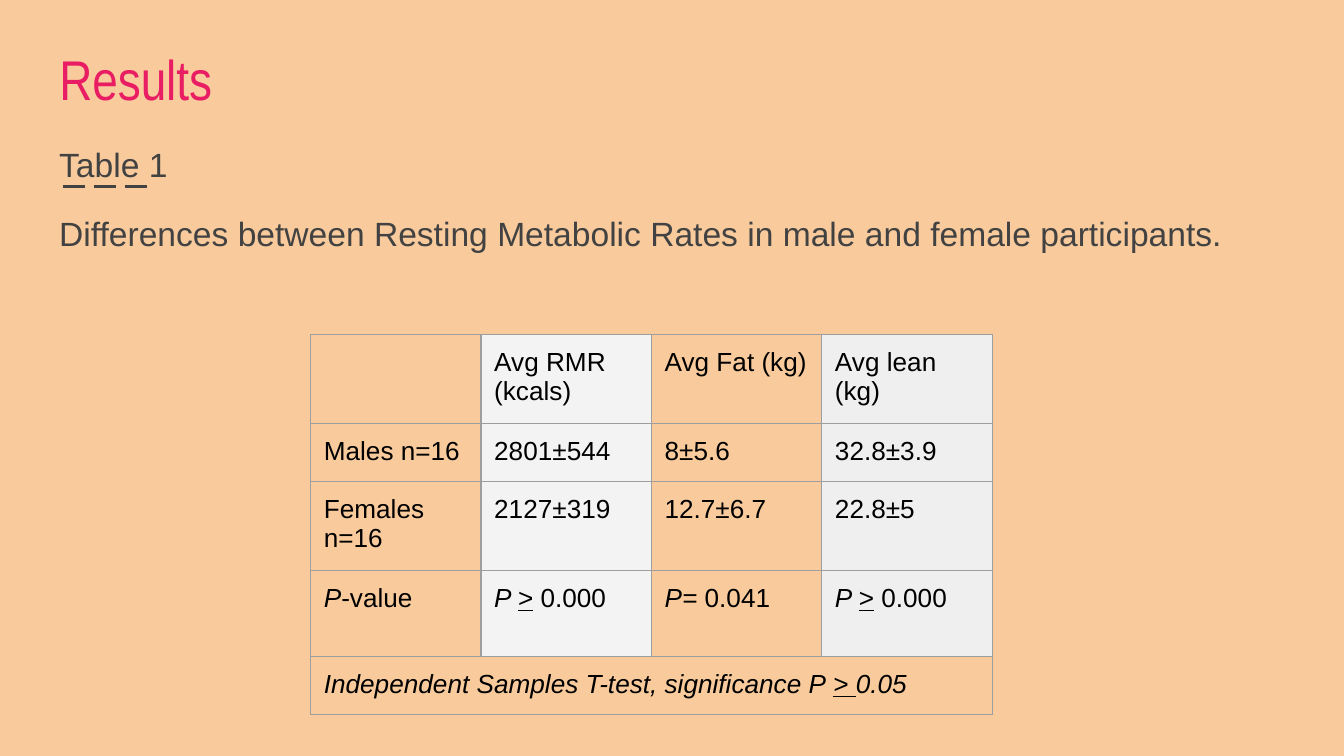
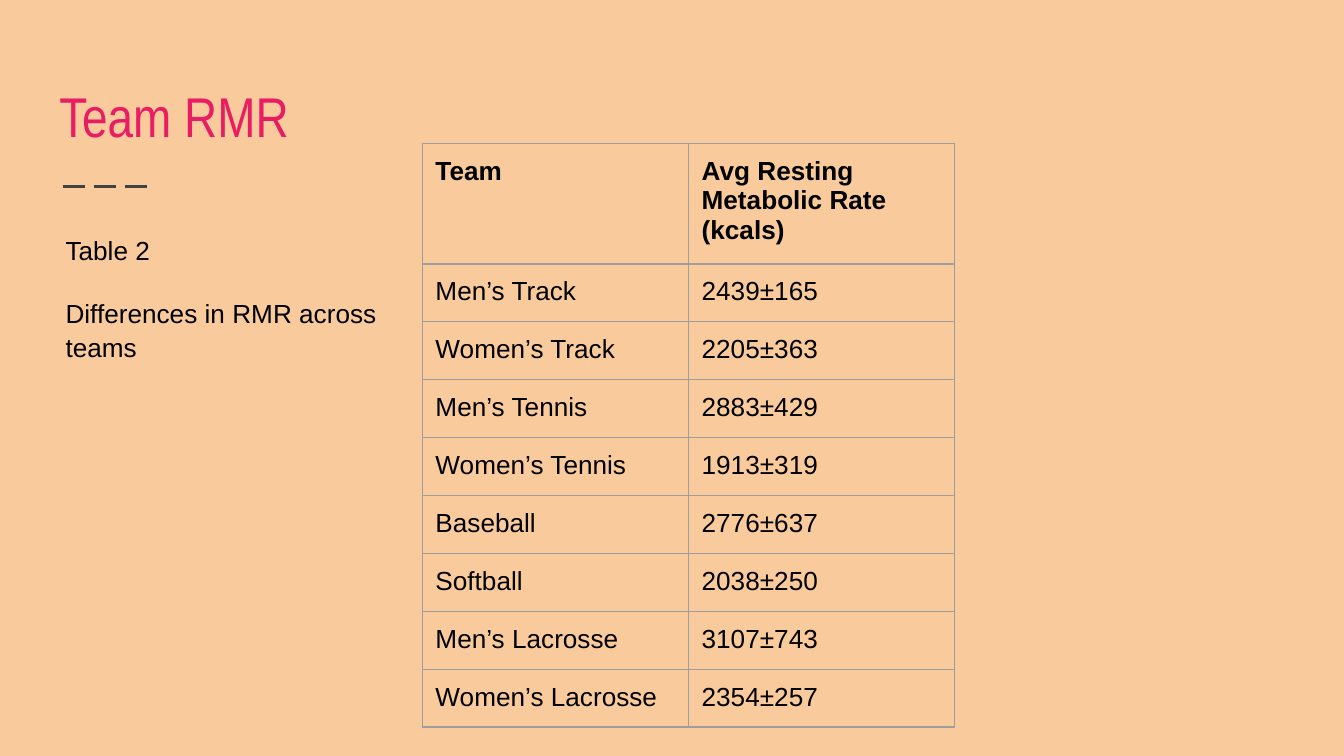
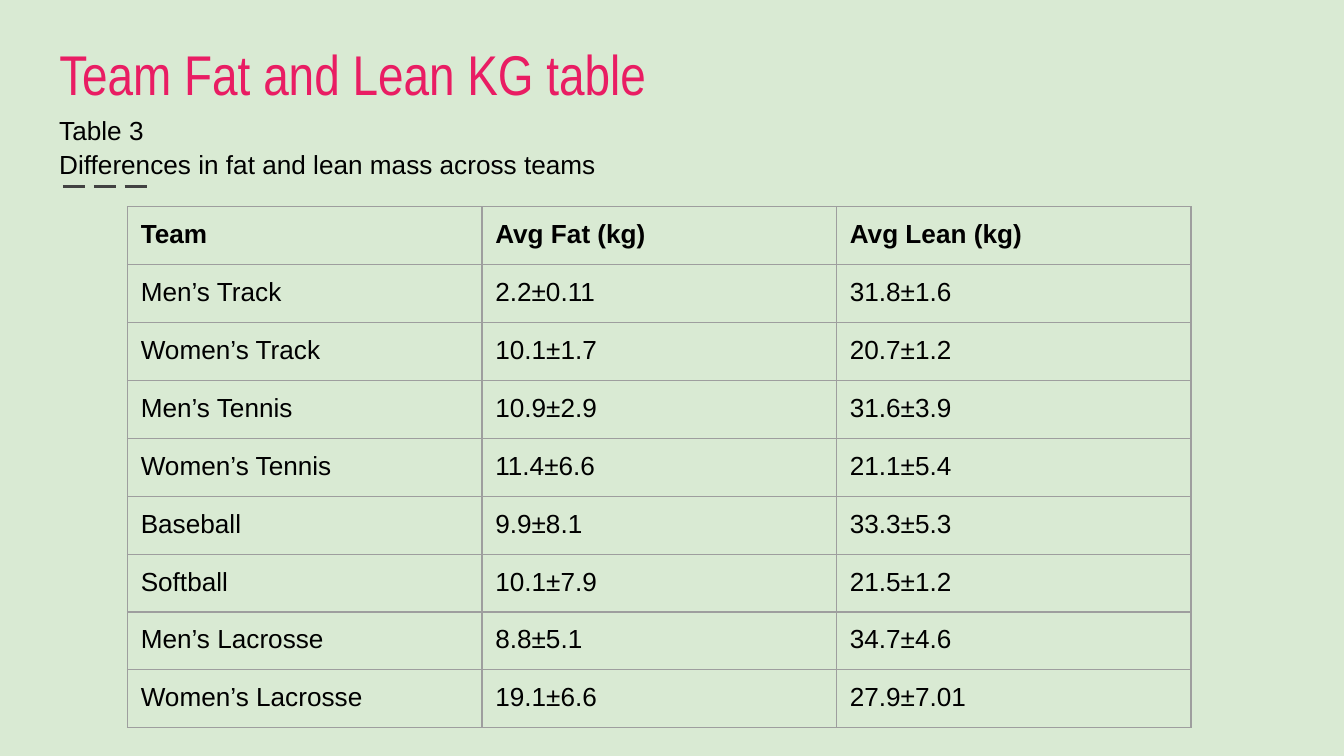
from dataclasses import dataclass, field
from typing import Any, NamedTuple

import pptx
import pptx.dml.color
import pptx.enum.dml
import pptx.enum.shapes
import pptx.enum.text
import pptx.oxml
import pptx.oxml.ns
import pptx.util
from pptx.util import Cm

# Shared look
PEACH, MINT = "F9CB9C", "D9EAD3"
PINK, GRAY, BLACK, BORDER = "E91D63", "424242", "000000", "9E9E9E"
LIGHT, LIGHTER = "EFEFEF", "F3F3F3"
MARGIN = Cm(0.25)
TITLE_FONT = {"name": "Arial Narrow", "size": pptx.util.Pt(30), "bold": False}
CAPTION_FONT = {"name": "Arial", "size": pptx.util.Pt(14)}
LEAD_FONT = {"name": "Arial", "size": pptx.util.Pt(18)}
INSETS = {f"margin_{side}": MARGIN for side in ("left", "right", "top", "bottom")}
ROW_HEIGHT, TALL_ROW = 1.06, 1.62


class Run(NamedTuple):
    text: str
    style: dict[str, Any] = {}


ITALIC, UNDERLINE = {"italic": True}, {"underline": True}
Content = str | list[Run]


class Box(NamedTuple):
    left: float
    top: float
    width: float
    height: float


@dataclass
class Caption:
    box: Box
    lines: list[str]
    line_spacing: float
    gap: int = 0
    font: dict[str, Any] = field(default_factory=lambda: CAPTION_FONT)
    color: str = BLACK


@dataclass
class Table:
    left: float
    top: float
    column_width: float
    rows: list[list[Content]]
    heights: dict[int, float] = field(default_factory=dict)
    column_fills: dict[int, str] = field(default_factory=dict)
    bold_header: bool = True
    note: Content = ""


@dataclass
class Page:
    background: str
    title: str
    title_top: float
    caption: Caption
    table: Table


def rgb(color: str) -> pptx.dml.color.RGBColor:
    return pptx.dml.color.RGBColor.from_string(color)


def apply(target: Any, values: dict[str, Any]) -> None:
    for name, value in values.items():
        setattr(target, name, value)


def write(paragraph: Any, content: Content, font: dict[str, Any], color: str) -> None:
    for part in [Run(content)] if isinstance(content, str) else content:
        if part.text:
            run = paragraph.add_run()
            run.text = part.text
            apply(run.font, font | part.style)
            run.font.color.rgb = rgb(color)


# Slide parts
def add_title(slide: Any, text: str, top: float) -> None:
    title = slide.shapes.title
    apply(title, {"left": Cm(0.87), "top": Cm(top), "width": Cm(23.67), "height": Cm(2.03)})
    frame = title.text_frame
    apply(frame, INSETS | {"word_wrap": True,
                           "auto_size": pptx.enum.text.MSO_AUTO_SIZE.NONE,
                           "vertical_anchor": pptx.enum.text.MSO_ANCHOR.BOTTOM})
    frame.paragraphs[0].alignment = pptx.enum.text.PP_ALIGN.LEFT
    write(frame.paragraphs[0], text, TITLE_FONT, PINK)


def add_dashes(slide: Any) -> None:
    dashes = slide.shapes.add_connector(
        pptx.enum.shapes.MSO_CONNECTOR.STRAIGHT, Cm(1.19), Cm(3.53), Cm(2.9), Cm(3.53))
    dashes.line.color.rgb = rgb(GRAY)
    apply(dashes.line, {"width": pptx.util.Pt(1.5),
                        "dash_style": pptx.enum.dml.MSO_LINE.LONG_DASH})
    properties = dashes._element.spPr
    properties.append(properties.makeelement(pptx.oxml.ns.qn("a:effectLst"), {}))


def add_caption(slide: Any, caption: Caption) -> None:
    frame = slide.shapes.add_textbox(*map(Cm, caption.box)).text_frame
    apply(frame, INSETS | {"word_wrap": True})
    for index, line in enumerate(caption.lines):
        paragraph = frame.add_paragraph() if index else frame.paragraphs[0]
        apply(paragraph, {"line_spacing": caption.line_spacing,
                          "space_before": pptx.util.Pt(caption.gap if index else 0)})
        write(paragraph, line, caption.font, caption.color)


def add_borders(cell: Any) -> None:
    properties = cell._tc.get_or_add_tcPr()
    for index, side in enumerate("LRTB"):
        properties.insert(index, pptx.oxml.parse_xml(
            f'<a:ln{side} {pptx.oxml.ns.nsdecls("a")} w="{pptx.util.Pt(0.75)}">'
            f'<a:solidFill><a:srgbClr val="{BORDER}"/></a:solidFill></a:ln{side}>'))


def add_table(slide: Any, table: Table) -> None:
    columns = len(table.rows[0])
    rows = list(table.rows)
    if table.note:
        rows.append([table.note] + [""] * (columns - 1))
    heights = [table.heights.get(index, ROW_HEIGHT) for index in range(len(rows))]
    grid = slide.shapes.add_table(
        len(rows), columns, Cm(table.left), Cm(table.top),
        Cm(table.column_width * columns), Cm(sum(heights))).table
    apply(grid, {"first_row": False, "horz_banding": False})
    for column in grid.columns:
        column.width = Cm(table.column_width)
    for row_index, row in enumerate(rows):
        grid.rows[row_index].height = Cm(heights[row_index])
        is_note = bool(table.note) and row_index == len(rows) - 1
        font = CAPTION_FONT | {"bold": table.bold_header and row_index == 0}
        for column_index, content in enumerate(row):
            cell = grid.cell(row_index, column_index)
            apply(cell, INSETS)
            write(cell.text_frame.paragraphs[0], content, font, BLACK)
            fill = None if is_note else table.column_fills.get(column_index)
            if fill:
                cell.fill.solid()
                cell.fill.fore_color.rgb = rgb(fill)
            else:
                cell.fill.background()
            add_borders(cell)
    if table.note:
        last = len(rows) - 1
        grid.cell(last, 0).merge(grid.cell(last, columns - 1))


# Content
TEAMS = ["Men’s Track", "Women’s Track", "Men’s Tennis", "Women’s Tennis",
         "Baseball", "Softball", "Men’s Lacrosse", "Women’s Lacrosse"]
TEAM_RATES = ["2439±165", "2205±363", "2883±429", "1913±319",
              "2776±637", "2038±250", "3107±743", "2354±257"]
TEAM_FAT = ["2.2±0.11", "10.1±1.7", "10.9±2.9", "11.4±6.6",
            "9.9±8.1", "10.1±7.9", "8.8±5.1", "19.1±6.6"]
TEAM_LEAN = ["31.8±1.6", "20.7±1.2", "31.6±3.9", "21.1±5.4",
             "33.3±5.3", "21.5±1.2", "34.7±4.6", "27.9±7.01"]
AT_LEAST_ZERO = [Run("P ", ITALIC), Run(">", UNDERLINE), Run(" 0.000")]

PAGES = [
    Page(PEACH, "Results", 0.33,
         Caption(Box(0.87, 2.36, 23.67, 8.61),
                 ["Table 1", "Differences between Resting Metabolic Rates in male "
                             "and female participants."],
                 1.15, 12, LEAD_FONT, GRAY),
         Table(5.87, 6.32, 3.22,
               [["", "Avg RMR (kcals)", "Avg Fat (kg)", "Avg lean (kg)"],
                ["Males n=16", "2801±544", "8±5.6", "32.8±3.9"],
                ["Females n=16", "2127±319", "12.7±6.7", "22.8±5"],
                [[Run("P", ITALIC), Run("-value")], AT_LEAST_ZERO,
                 [Run("P=", ITALIC), Run(" 0.041")], AT_LEAST_ZERO]],
               heights={0: TALL_ROW, 2: TALL_ROW, 3: TALL_ROW},
               column_fills={1: LIGHTER, 3: LIGHT}, bold_header=False,
               note=[Run("Independent Samples T-test, significance P ", ITALIC),
                     Run("> ", ITALIC | UNDERLINE), Run("0.05", ITALIC)])),
    Page(PEACH, "Team RMR", 1.04,
         Caption(Box(0.99, 4.14, 7.01, 2.9),
                 ["Table 2", "Differences in RMR across teams"], 1.07, 16),
         Table(7.98, 2.71, 5.03,
               [["Team", "Avg Resting Metabolic Rate (kcals)"],
                *map(list, zip(TEAMS, TEAM_RATES))],
               heights={0: 2.17})),
    Page(MINT, "Team Fat and Lean KG table", 0.23,
         Caption(Box(0.87, 1.88, 12.6, 1.7),
                 ["Table 3", "Differences in fat and lean mass across teams"], 1.07),
         Table(2.41, 3.91, 6.7,
               [["Team", "Avg Fat (kg)", "Avg Lean (kg)"],
                *map(list, zip(TEAMS, TEAM_FAT, TEAM_LEAN))])),
]


def main() -> None:
    presentation = pptx.Presentation()
    apply(presentation, {"slide_width": Cm(25.4), "slide_height": Cm(14.29)})
    title_only = presentation.slide_layouts[5]
    for page in PAGES:
        slide = presentation.slides.add_slide(title_only)
        slide.background.fill.solid()
        slide.background.fill.fore_color.rgb = rgb(page.background)
        add_dashes(slide)
        add_title(slide, page.title, page.title_top)
        add_caption(slide, page.caption)
        add_table(slide, page.table)
    presentation.save("out.pptx")


if __name__ == "__main__":
    main()
